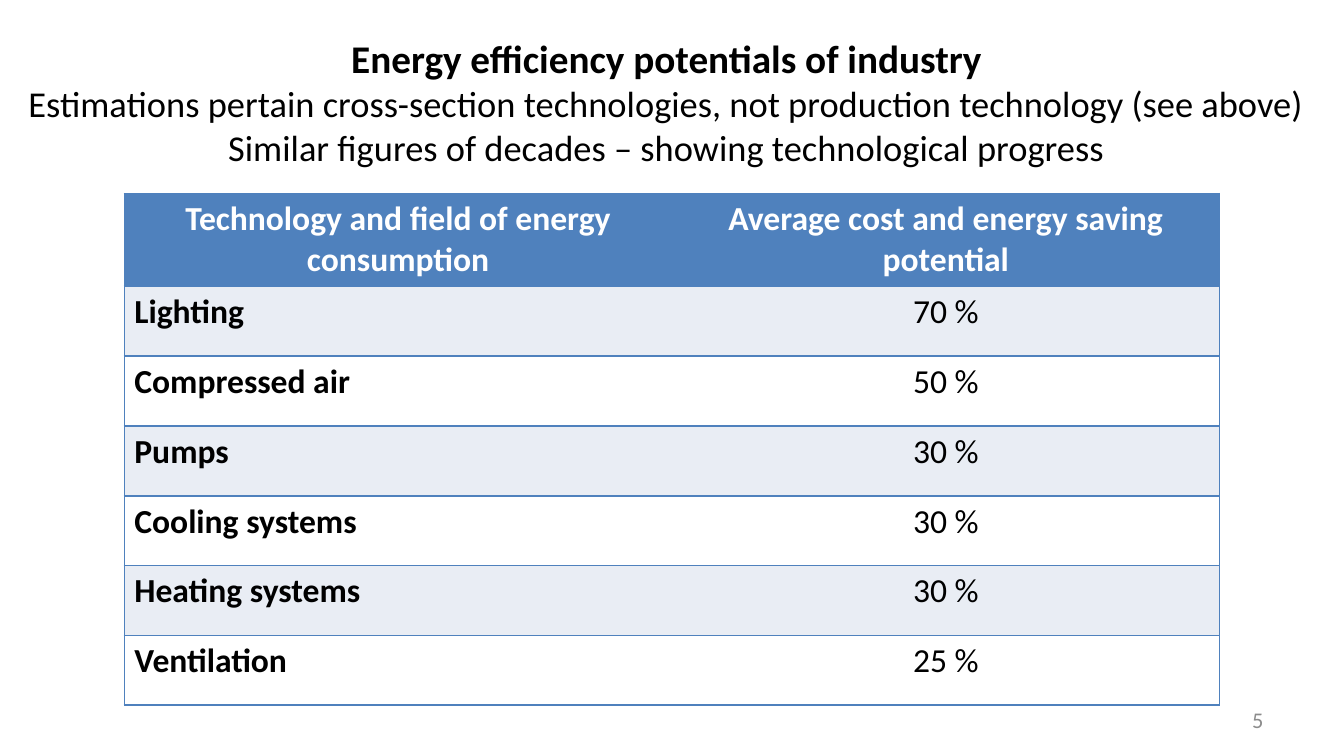
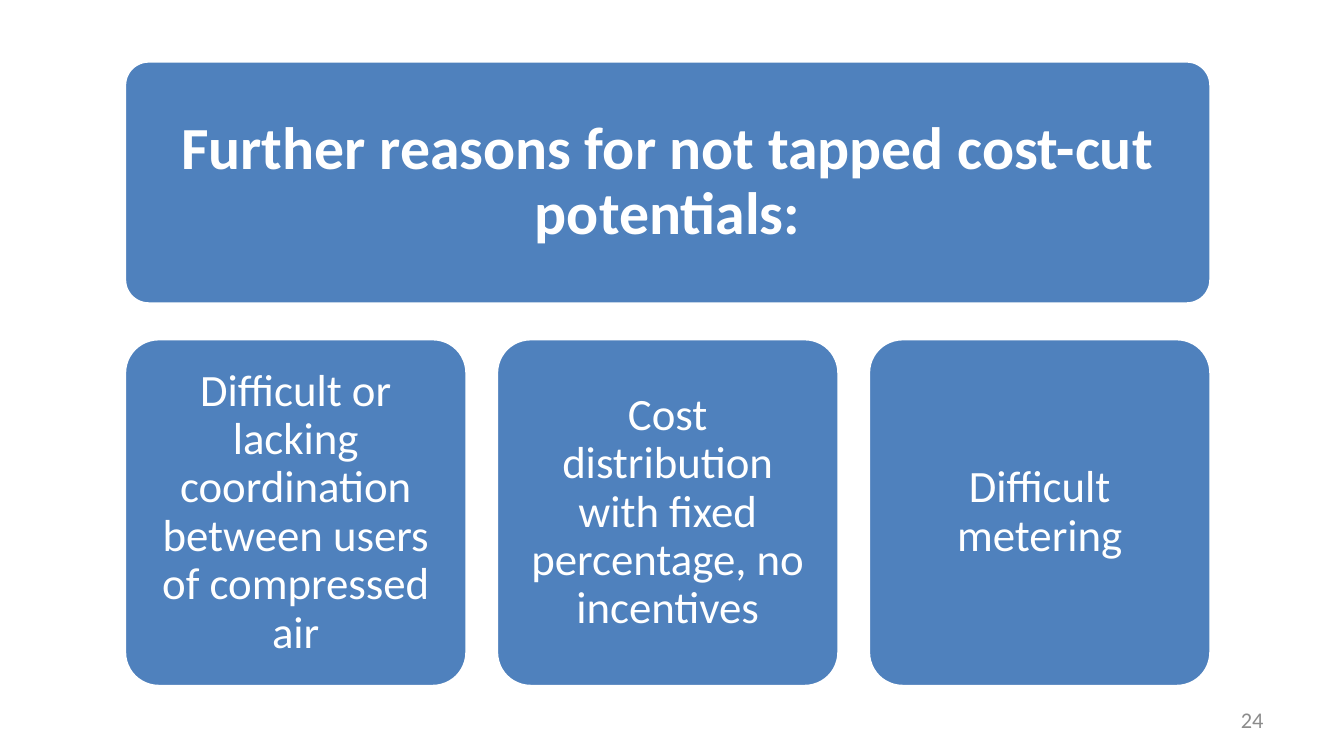
from lxml.etree import SubElement
from pptx import Presentation
from pptx.dml.color import RGBColor
from pptx.enum.shapes import MSO_SHAPE as SHAPE
from pptx.enum.text import MSO_ANCHOR as ANCHOR, PP_ALIGN as ALIGN
from pptx.oxml.ns import qn
from pptx.util import Cm, Pt

BLUE = RGBColor(0x4F, 0x81, 0xBD)
PALE = RGBColor(0xE9, 0xED, 0xF4)
WHITE = RGBColor(0xFF, 0xFF, 0xFF)
BLACK = RGBColor(0, 0, 0)
GREY = RGBColor(0x8C, 0x8C, 0x8C)
FONT = "Calibri"
NO_STYLE = "{2D5ABB26-0587-4C30-8999-92F81FD0307C}"

SAVINGS = [
    ("Technology and field of energy consumption",
     "Average cost and energy saving potential"),
    ("Lighting", "70 %"),
    ("Compressed air", "50 %"),
    ("Pumps", "30 %"),
    ("Cooling systems", "30 %"),
    ("Heating systems", "30 %"),
    ("Ventilation", "25 %"),
]
REASONS = [
    "Difficult or lacking coordination between users of compressed air",
    "Cost distribution with fixed percentage, no incentives",
    "Difficult metering",
]


class Deck:
    def __init__(self):
        self.prs = Presentation()
        self.prs.slide_width, self.prs.slide_height = Cm(25.4), Cm(14.29)
        self.s = None

    def slide(self, number):
        self.s = self.prs.slides.add_slide(self.prs.slide_layouts[6])
        p = self.textbox(18.21, 13.23, 5.92, 0.76, ALIGN.RIGHT)
        self.run(p, str(number), 12, GREY)

    def run(self, p, text, size, color, bold=False):
        r = p.add_run()
        r.text = text
        r.font.name, r.font.size, r.font.bold = FONT, Pt(size), bold
        r.font.color.rgb = color

    def textbox(self, x, y, w, h, align):
        tf = self.s.shapes.add_textbox(Cm(x), Cm(y), Cm(w), Cm(h)).text_frame
        tf.word_wrap, tf.vertical_anchor = True, ANCHOR.MIDDLE
        p = tf.paragraphs[0]
        p.alignment = align
        return p

    def title(self, heading, detail):
        p = self.textbox(-0.2, 0, 25.6, 3.84, ALIGN.CENTER)
        self.run(p, heading, 21, BLACK, True)
        p.add_line_break()
        self.run(p, detail, 19.5, BLACK)

    def box(self, x, y, w, h, text, size, inset, bold=False):
        sp = self.s.shapes.add_shape(
            SHAPE.ROUNDED_RECTANGLE, Cm(x), Cm(y), Cm(w), Cm(h))
        sp.adjustments[0] = 0.1
        sp.shadow.inherit = False
        sp.fill.solid()
        sp.fill.fore_color.rgb = BLUE
        sp.line.color.rgb, sp.line.width = WHITE, Pt(2)
        tf = sp.text_frame
        tf.word_wrap, tf.vertical_anchor = True, ANCHOR.MIDDLE
        tf.margin_left = tf.margin_right = Cm(inset)
        tf.margin_top = tf.margin_bottom = Cm(inset)
        p = tf.paragraphs[0]
        p.alignment, p.line_spacing = ALIGN.CENTER, 0.9
        self.run(p, text, size, WHITE, bold)

    def border(self, cell, sides):
        tc_pr = cell._tc.get_or_add_tcPr()
        for side in sides:
            ln = SubElement(tc_pr, qn(f"a:ln{side}"), w=str(Pt(1)))
            fill = SubElement(ln, qn("a:solidFill"))
            SubElement(fill, qn("a:srgbClr"), val=str(BLUE))

    def table(self, x, y, col_w, head_h, row_h, rows):
        n_rows, n_cols = len(rows), len(rows[0])
        height = head_h + row_h * (n_rows - 1)
        tbl = self.s.shapes.add_table(
            n_rows, n_cols, Cm(x), Cm(y), Cm(col_w * n_cols), Cm(height)).table
        tbl._tbl.tblPr.find(qn("a:tableStyleId")).text = NO_STYLE
        for col in tbl.columns:
            col.width = Cm(col_w)
        for i, texts in enumerate(rows):
            head = i == 0
            tbl.rows[i].height = Cm(head_h if head else row_h)
            for j, text in enumerate(texts):
                cell = tbl.cell(i, j)
                self.border(cell, "RTB" if j else "LTB")
                cell.fill.solid()
                cell.fill.fore_color.rgb = BLUE if head else PALE if i % 2 else WHITE
                cell.margin_left = cell.margin_right = Cm(0.19)
                cell.margin_top = cell.margin_bottom = Cm(0.1)
                p = cell.text_frame.paragraphs[0]
                p.alignment = ALIGN.CENTER if head or j else ALIGN.LEFT
                self.run(p, text, 18, WHITE if head else BLACK, head or j == 0)


def main():
    deck = Deck()

    deck.slide(5)
    deck.title("Energy efficiency potentials of industry",
               "Estimations pertain cross-section technologies, not production "
               "technology (see above) Similar figures of decades – showing "
               "technological progress")
    deck.table(2.35, 3.66, 10.35, 1.75, 1.32, SAVINGS)

    deck.slide(24)
    left, width, gap = 2.35, 6.48, 0.55
    full = len(REASONS) * (width + gap) - gap
    deck.box(left, 1.15, full, 4.6, "Further reasons for not tapped cost-cut potentials:",
             32, 0.33, True)
    for i, reason in enumerate(REASONS):
        deck.box(left + i * (width + gap), 6.4, width, 6.58, reason, 24, 0.25)

    deck.prs.save("out.pptx")


if __name__ == "__main__":
    main()
